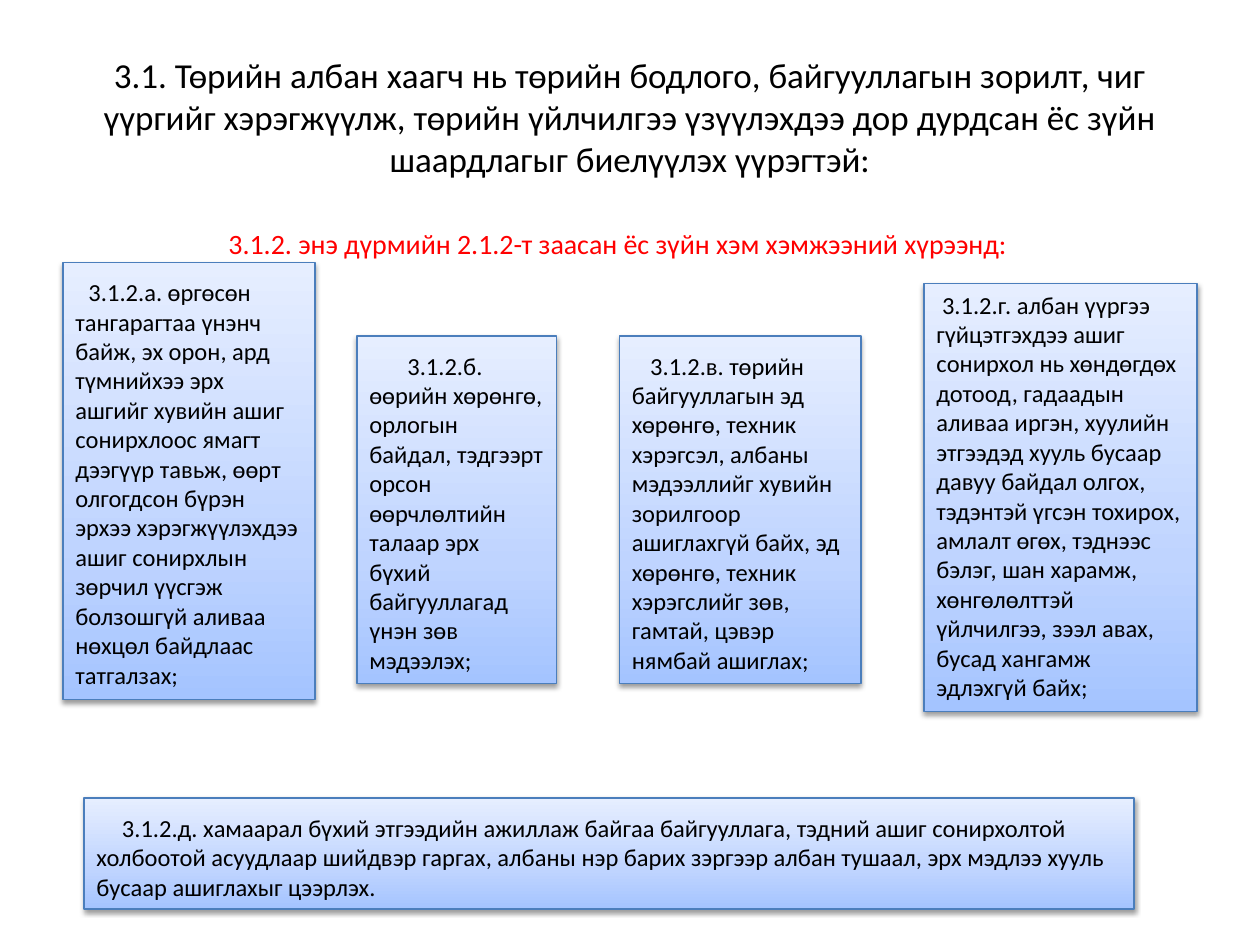
import copy
import lxml.etree
import pptx
import pptx.dml.color
import pptx.enum.shapes
import pptx.enum.text
import pptx.oxml.ns
import pptx.util

Pt = pptx.util.Pt
RGBColor = pptx.dml.color.RGBColor
ALIGN = pptx.enum.text.PP_ALIGN
ANCHOR = pptx.enum.text.MSO_ANCHOR
qn = pptx.oxml.ns.qn

BLACK = RGBColor(0x00, 0x00, 0x00)
RED = RGBColor(0xFF, 0x00, 0x00)
BORDER = RGBColor(0x4B, 0x7E, 0xBC)
GRADIENT = [
    (0, RGBColor(0xA4, 0xC4, 0xFF)),
    (0.35, RGBColor(0xBF, 0xD4, 0xFF)),
    (1, RGBColor(0xE6, 0xEE, 0xFF)),
]


def write(shape, text, size, color, align, anchor):
    frame = shape.text_frame
    frame.word_wrap = True
    frame.vertical_anchor = anchor
    paragraph = frame.paragraphs[0]
    paragraph.text = text
    paragraph.alignment = align
    paragraph.font.name = "Calibri"
    paragraph.font.size = Pt(size)
    paragraph.font.color.rgb = color
    return paragraph


def style_card(card):
    # Three-stop gradient, darkest at the bottom
    card.fill.gradient()
    card.fill.gradient_angle = 90
    first_stop = card.fill.gradient_stops[0]._gs
    first_stop.addnext(copy.deepcopy(first_stop))
    for stop, (position, color) in zip(card.fill.gradient_stops, GRADIENT):
        stop.position = position
        stop.color.rgb = color
    card.line.color.rgb = BORDER
    card.line.width = Pt(0.75)

    # Soft shadow below
    card.shadow.inherit = False
    effects = card._element.spPr.find(qn("a:effectLst"))
    shadow = lxml.etree.SubElement(
        effects, qn("a:outerShdw"), blurRad=str(Pt(3.1)), dist=str(Pt(1.6)),
        dir="5400000", rotWithShape="0")
    black = lxml.etree.SubElement(shadow, qn("a:srgbClr"), val="000000")
    lxml.etree.SubElement(black, qn("a:alpha"), val="38000")


deck = pptx.Presentation()
deck.slide_width = Pt(720)
deck.slide_height = Pt(540)
slide = deck.slides.add_slide(deck.slide_layouts[6])

# Subheading
subheading = slide.shapes.add_textbox(Pt(48), Pt(126), Pt(636), Pt(36))
write(subheading, "3.1.2. энэ дүрмийн 2.1.2-т заасан ёс зүйн хэм хэмжээний хүрээнд:",
      16, RED, ALIGN.CENTER, ANCHOR.TOP)
subheading.text_frame.margin_right = Pt(33)

# Title
title = slide.shapes.add_textbox(Pt(36), Pt(21.6), Pt(648), Pt(90))
write(title,
      "3.1. Төрийн албан хаагч нь төрийн бодлого, байгууллагын зорилт, чиг "
      "үүргийг хэрэгжүүлж, төрийн үйлчилгээ үзүүлэхдээ дор дурдсан ёс зүйн "
      "шаардлагыг биелүүлэх үүрэгтэй:",
      20, BLACK, ALIGN.CENTER, ANCHOR.MIDDLE)

# Rule cards: left, top, width, height, first-line indent, top inset, text
rules = [
    (36, 150, 144, 249.8, 7.5, 8.4,
     "3.1.2.а. өргөсөн тангарагтаа үнэнч байж, эх орон, ард түмнийхээ эрх "
     "ашгийг хувийн ашиг сонирхлоос ямагт дээгүүр тавьж, өөрт олгогдсон бүрэн "
     "эрхээ хэрэгжүүлэхдээ ашиг сонирхлын зөрчил үүсгэж болзошгүй аливаа "
     "нөхцөл байдлаас татгалзах;"),
    (204, 192, 114, 198.7, 21.7, 8.4,
     "3.1.2.б. өөрийн хөрөнгө, орлогын байдал, тэдгээрт орсон өөрчлөлтийн "
     "талаар эрх бүхий байгууллагад үнэн зөв мэдээлэх;"),
    (354, 192, 138, 198.7, 10.5, 8.4,
     "3.1.2.в. төрийн байгууллагын эд хөрөнгө, техник хэрэгсэл, албаны "
     "мэдээллийг хувийн зорилгоор ашиглахгүй байх, эд хөрөнгө, техник "
     "хэрэгслийг зөв, гамтай, цэвэр нямбай ашиглах;"),
    (528, 162, 156, 244.8, 3.2, 3.6,
     "3.1.2.г. албан үүргээ гүйцэтгэхдээ ашиг сонирхол нь хөндөгдөх дотоод, "
     "гадаадын аливаа иргэн, хуулийн этгээдэд хууль бусаар давуу байдал олгох, "
     "тэдэнтэй үгсэн тохирох, амлалт өгөх, тэднээс бэлэг, шан харамж, "
     "хөнгөлөлттэй үйлчилгээ, зээл авах, бусад хангамж эдлэхгүй байх;"),
    (48, 456, 600, 63.4, 14.6, 8.4,
     "3.1.2.д. хамаарал бүхий этгээдийн ажиллаж байгаа байгууллага, тэдний "
     "ашиг сонирхолтой холбоотой асуудлаар шийдвэр гаргах, албаны нэр барих "
     "зэргээр албан тушаал, эрх мэдлээ хууль бусаар ашиглахыг цээрлэх."),
]
for left, top, width, height, indent, inset, text in rules:
    card = slide.shapes.add_shape(
        pptx.enum.shapes.MSO_SHAPE.RECTANGLE,
        Pt(left), Pt(top), Pt(width), Pt(height))
    style_card(card)
    rule = write(card, text, 14, BLACK, ALIGN.LEFT, ANCHOR.TOP)
    rule._p.get_or_add_pPr().set("indent", str(Pt(indent)))
    card.text_frame.margin_top = Pt(inset)

deck.save("out.pptx")
